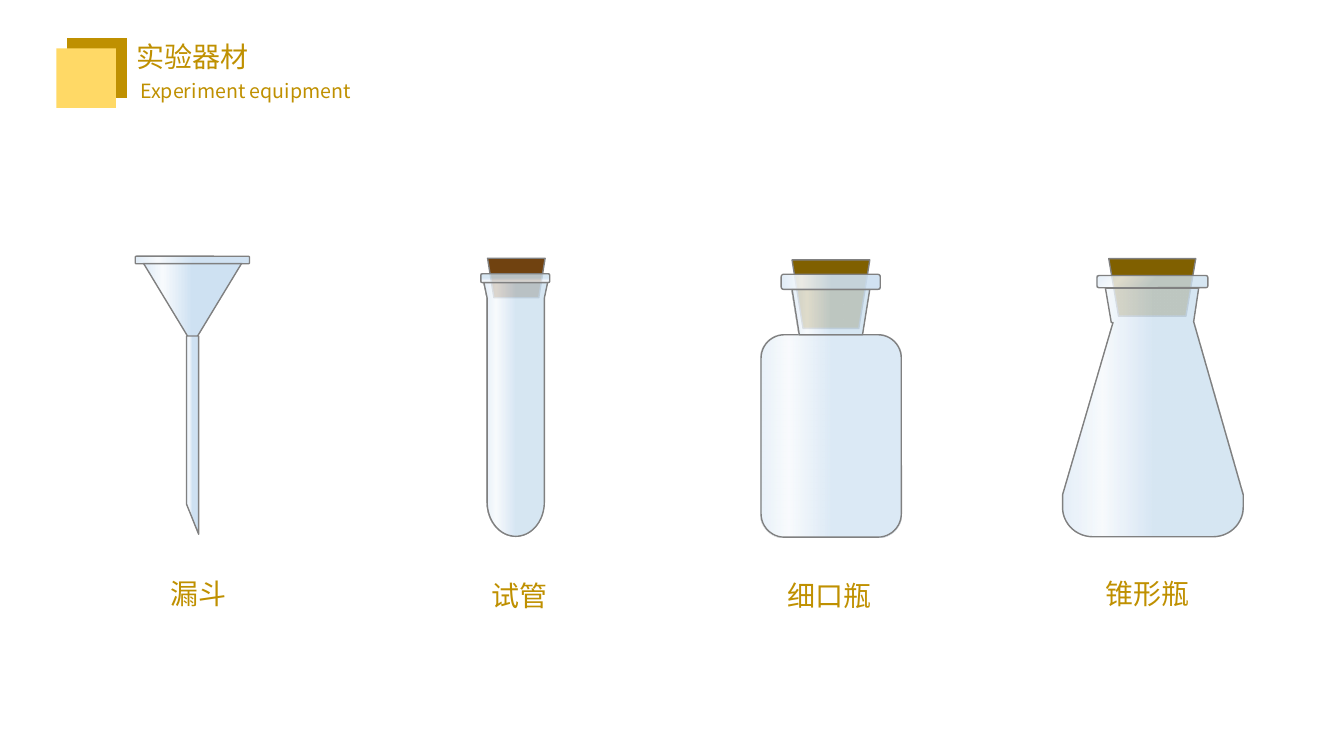
import math
from dataclasses import dataclass
from typing import Any, Optional, Union

import lxml.etree
import pptx
import pptx.dml.color
import pptx.enum.shapes
import pptx.enum.text
import pptx.oxml
import pptx.oxml.ns
import pptx.util

Kind = pptx.enum.shapes.MSO_SHAPE
Point = tuple[float, float]
COLS, ROWS = 160, 90
CELL = pptx.util.Inches(7.5) // ROWS


@dataclass(frozen=True)
class Theme:
    gold: str = "BF9000"
    pale_gold: str = "FFD966"
    cork: str = "806000"
    brown_cork: str = "704210"
    outline: str = "808080"
    glass: tuple[str, str, str] = ("DEEBF7", "F7FAFD", "CEE1F2")
    cjk: str = "Noto Sans CJK SC"
    latin: str = "Arial"
    heading: int = 20
    subheading: int = 14
    line: int = 1


THEME = Theme()


@dataclass(frozen=True)
class Glass:
    opacity: int = 80
    angle: int = 0
    shine: int = 20


@dataclass(frozen=True)
class Piece:
    kind: Kind
    col: float
    row: float
    cols: float
    rows: float
    fill: Union[str, Glass]
    flipped: bool = False
    adjust: Optional[float] = None
    outlined: bool = True


@dataclass(frozen=True)
class Outline:
    points: tuple[Point, ...]
    fill: Glass


@dataclass(frozen=True)
class Text:
    text: str
    col: float
    row: float
    cols: float
    rows: float
    size: int = THEME.heading
    font: str = THEME.cjk
    wrap: bool = True


@dataclass(frozen=True)
class Apparatus:
    name: str
    label_center: float
    label_row: float
    pieces: tuple[Union[Piece, Outline], ...]


def cells(n: float) -> pptx.util.Emu:
    return pptx.util.Emu(round(n * CELL))


def rgb(color: str) -> pptx.dml.color.RGBColor:
    return pptx.dml.color.RGBColor.from_string(color)


def arc(col: float, row: float, rx: float, ry: float, start: int, end: int) -> tuple[Point, ...]:
    steps = abs(end - start) // 5
    angles = [math.radians(start + (end - start) * i / steps) for i in range(steps + 1)]
    return tuple((col + rx * math.cos(a), row + ry * math.sin(a)) for a in angles)


def fill_glass(sp: Any, glass: Glass) -> None:
    stops = "".join(
        f'<a:gs pos="{pos * 1000}"><a:srgbClr val="{color}">'
        f'<a:alpha val="{glass.opacity * 1000}"/></a:srgbClr></a:gs>'
        for pos, color in zip((0, glass.shine, 50), THEME.glass)
    )
    ns = pptx.oxml.ns.nsdecls("a")
    grad = pptx.oxml.parse_xml(
        f'<a:gradFill {ns} rotWithShape="1"><a:gsLst>{stops}</a:gsLst>'
        f'<a:lin ang="{glass.angle * 60000}" scaled="0"/></a:gradFill>'
    )
    sp.fill.solid()
    solid = sp._element.spPr.find(pptx.oxml.ns.qn("a:solidFill"))
    solid.getparent().replace(solid, grad)


def style(sp: Any, fill: Union[str, Glass], outlined: bool = True) -> None:
    sp.shadow.inherit = False
    if isinstance(fill, Glass):
        fill_glass(sp, fill)
    else:
        sp.fill.solid()
        sp.fill.fore_color.rgb = rgb(fill)
    if outlined:
        sp.line.color.rgb = rgb(THEME.outline)
        sp.line.width = pptx.util.Pt(THEME.line)
    else:
        sp.line.fill.background()


def draw_piece(s: Any, piece: Piece) -> None:
    sp = s.shapes.add_shape(piece.kind, *map(cells, (piece.col, piece.row, piece.cols, piece.rows)))
    if piece.adjust is not None:
        sp.adjustments[0] = piece.adjust
    if piece.flipped:
        sp._element.spPr.xfrm.set("flipV", "1")
    style(sp, piece.fill, piece.outlined)


def draw_outline(s: Any, outline: Outline) -> None:
    points = [(cells(x), cells(y)) for x, y in outline.points]
    builder = s.shapes.build_freeform(*points[0])
    builder.add_line_segments(points[1:], close=True)
    style(builder.convert_to_shape(), outline.fill)


def draw_text(s: Any, text: Text) -> None:
    sp = s.shapes.add_textbox(*map(cells, (text.col, text.row, text.cols, text.rows)))
    tf = sp.text_frame
    tf.word_wrap = text.wrap
    tf.auto_size = pptx.enum.text.MSO_AUTO_SIZE.SHAPE_TO_FIT_TEXT
    r = tf.paragraphs[0].add_run()
    r.text = text.text
    r.font.name = text.font
    r.font.size = pptx.util.Pt(text.size)
    r.font.color.rgb = rgb(THEME.gold)
    ea = lxml.etree.SubElement(r.font._element, pptx.oxml.ns.qn("a:ea"))
    ea.set("typeface", THEME.cjk)


def draw_apparatus(s: Any, item: Apparatus) -> None:
    for piece in item.pieces:
        if isinstance(piece, Piece):
            draw_piece(s, piece)
        else:
            draw_outline(s, piece)
    cols = len(item.name) * 3.33 + 2.4
    draw_text(s, Text(item.name, item.label_center - cols / 2, item.label_row, cols, 5.3, wrap=False))


TUBE = ((57.6, 33.6), (65.2, 33.6), (64.8, 35.5), *arc(61.4, 59.8, 3.4, 4.05, 0, 180), (58, 35.5))
FLASK = (
    (131.6, 34.3), (142.7, 34.3), (142.1, 38.3), (148, 58.9),
    *arc(144.4, 60.4, 3.6, 3.5, 0, 90), *arc(130.1, 60.4, 3.6, 3.5, 90, 180),
    (126.5, 58.9), (132.5, 38.4), (132.3, 38.4),
)
STEM = ((22.2, 40), (23.65, 40), (23.65, 63.6), (22.2, 60))

APPARATUS = (
    Apparatus("漏斗", 23.6, 68, (
        Piece(Kind.ISOSCELES_TRIANGLE, 17.05, 31.3, 11.75, 9.7, Glass(100), flipped=True),
        Outline(STEM, Glass(100)),
        Piece(Kind.ROUNDED_RECTANGLE, 16.1, 30.5, 13.6, 0.9, Glass(90)),
    )),
    Apparatus("试管", 61.9, 68.25, (
        Piece(Kind.TRAPEZOID, 58.05, 30.75, 6.85, 4.7, THEME.brown_cork, True, 0.16),
        Outline(TUBE, Glass()),
        Piece(Kind.ROUNDED_RECTANGLE, 57.25, 32.6, 8.2, 1.05, Glass(angle=270)),
    )),
    Apparatus("细口瓶", 98.8, 68.25, (
        Piece(Kind.TRAPEZOID, 94.3, 30.95, 9.25, 8.15, THEME.cork, True, 0.16),
        Piece(Kind.ROUNDED_RECTANGLE, 90.6, 39.85, 16.7, 24.1, Glass(70)),
        Piece(Kind.TRAPEZOID, 94.3, 34.45, 9.25, 5.4, Glass(), True, 0.16),
        Piece(Kind.ROUNDED_RECTANGLE, 93, 32.65, 11.8, 1.8, Glass(90)),
    )),
    Apparatus("锥形瓶", 136.6, 68, (
        Piece(Kind.TRAPEZOID, 132, 30.8, 10.35, 6.85, THEME.cork, True, 0.17),
        Outline(FLASK, Glass(shine=22)),
        Piece(Kind.ROUNDED_RECTANGLE, 130.6, 32.8, 13.2, 1.45, Glass(angle=45, shine=22)),
    )),
)
EMBLEM = (
    Piece(Kind.RECTANGLE, 8, 4.55, 7.1, 7.1, THEME.gold, outlined=False),
    Piece(Kind.RECTANGLE, 6.7, 5.75, 7.1, 7.1, THEME.pale_gold, outlined=False),
)
HEADINGS = (
    Text("实验器材", 15.1, 4.1, 45.6, 5.3, font=THEME.latin),
    Text(" Experiment equipment", 15, 8.75, 31, 4.1, THEME.subheading),
)


def main() -> None:
    prs = pptx.Presentation()
    prs.slide_width, prs.slide_height = cells(COLS), cells(ROWS)
    s = prs.slides.add_slide(prs.slide_layouts[6])
    for piece in EMBLEM:
        draw_piece(s, piece)
    for text in HEADINGS:
        draw_text(s, text)
    for item in APPARATUS:
        draw_apparatus(s, item)
    prs.save("out.pptx")


if __name__ == "__main__":
    main()
